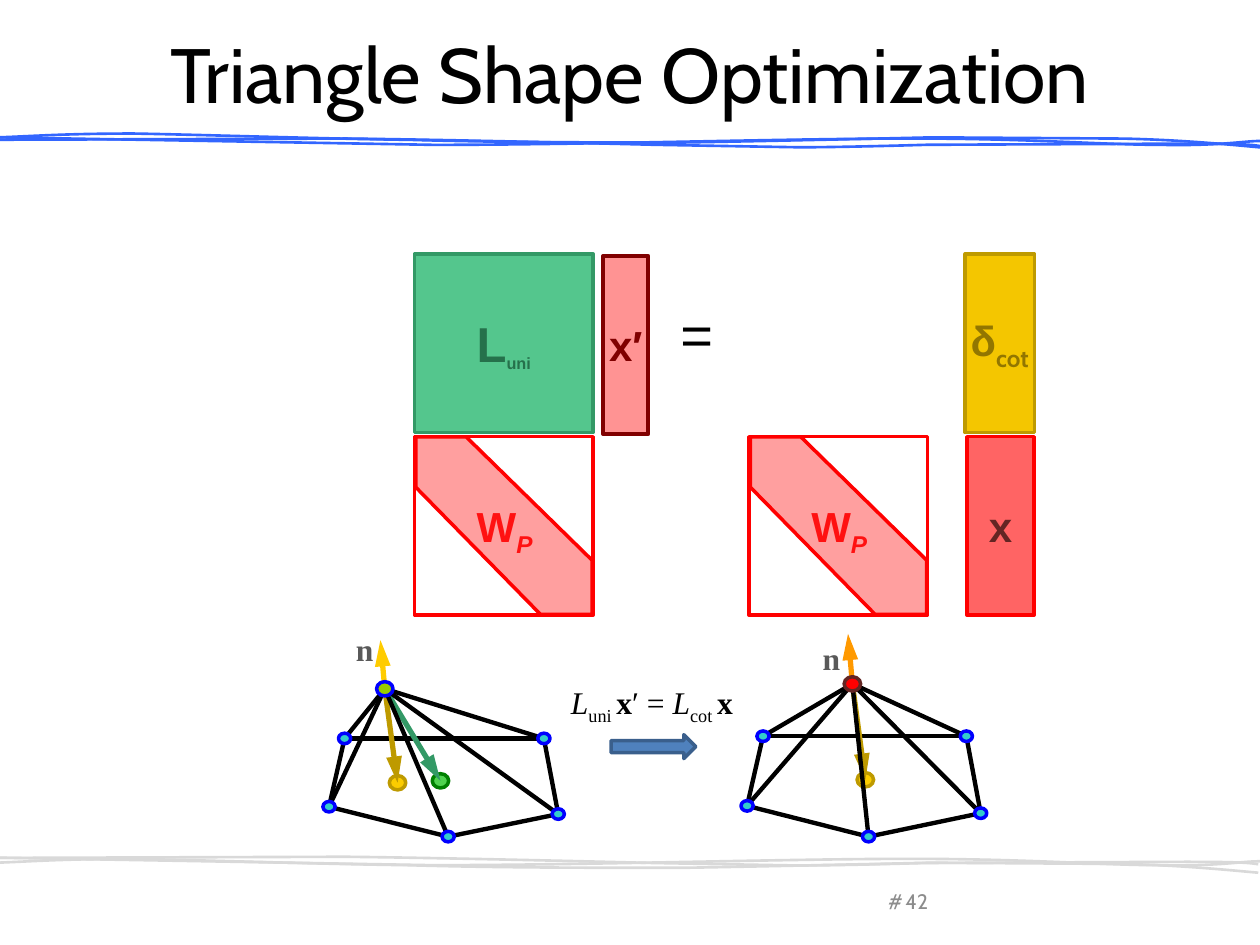
from dataclasses import dataclass
from typing import NamedTuple, Optional

from lxml.etree import SubElement
from pptx import Presentation
from pptx.dml.color import RGBColor
from pptx.enum.shapes import MSO_CONNECTOR, MSO_SHAPE
from pptx.enum.text import MSO_ANCHOR, PP_ALIGN
from pptx.oxml.ns import qn
from pptx.util import Pt

BLACK = RGBColor(0x00, 0x00, 0x00)
BLUE = RGBColor(0x00, 0x00, 0xFF)
RED = RGBColor(0xFF, 0x00, 0x00)
SKY = RGBColor(0x33, 0x66, 0xFF)
PALE = RGBColor(0xD9, 0xD9, 0xD9)
GRAY = RGBColor(0x8C, 0x8C, 0x8C)
SLATE = RGBColor(0x59, 0x59, 0x59)
ROSE = RGBColor(0xFF, 0x93, 0x93)
BLUSH = RGBColor(0xFF, 0x9F, 0x9F)
CORAL = RGBColor(0xFF, 0x64, 0x64)
FLAME = RGBColor(0xFF, 0x11, 0x11)
MAROON = RGBColor(0x80, 0x00, 0x00)
BROWN = RGBColor(0x63, 0x25, 0x23)
AMBER = RGBColor(0xF4, 0xC6, 0x00)
GOLD = RGBColor(0xFC, 0xCC, 0x00)
SUN = RGBColor(0xFF, 0xCC, 0x00)
ORANGE = RGBColor(0xFF, 0x99, 0x00)
OCHRE = RGBColor(0xBE, 0x9A, 0x00)
OLIVE = RGBColor(0x92, 0x76, 0x00)
MINT = RGBColor(0x54, 0xC6, 0x8D)
GREEN = RGBColor(0x33, 0x99, 0x66)
FOREST = RGBColor(0x25, 0x71, 0x4B)
GRASS = RGBColor(0x4F, 0xD3, 0x4F)
MOSS = RGBColor(0x00, 0x80, 0x00)
LIME = RGBColor(0x99, 0xCC, 0x00)
AQUA = RGBColor(0x33, 0xCC, 0xCC)
STEEL = RGBColor(0x4F, 0x81, 0xBD)
NAVY = RGBColor(0x3A, 0x5F, 0x8C)

SANS, TITLE, SERIF = "Arial", "Cabin", "Times New Roman"
SIDE = 102
TOP, LOW = 145.2, 249.6
Point = tuple[float, float]


class Bit(NamedTuple):
    text: str
    size: float
    color: RGBColor
    font: str = SANS
    bold: bool = False
    slant: bool = False
    sub: bool = False


class Pull(NamedTuple):
    tip: Point
    fill: RGBColor
    edge: RGBColor
    line: RGBColor


@dataclass
class Mesh:
    peak: Point
    rim: list[Point]
    pulls: list[Pull]
    normal: Point
    shade: RGBColor
    fill: RGBColor
    edge: RGBColor
    label: Point


# Each strand: drop to the footer, start, then lines (2 numbers) and curves (6).
STRANDS = [
    (411.6, (-0.7, 78.5), [
        (247.7, 82.8), (334.8, 82.8, 451.4, 79.2, 520.6, 79.2),
        (589.7, 79.2, 630.7, 82.8, 663.8, 82.8),
        (697, 83.5, 710.6, 80.6, 720, 80.6), (729.4, 79.9, 724, 80.3, 719.3, 80.6)]),
    (414.5, (-0.7, 78.5), [
        (18.7, 77.8, 37.4, 76.3, 76.3, 76.3), (115.9, 77, 181.4, 79.2, 234, 79.9),
        (285.8, 81.4, 341.3, 81.4, 391, 81.4),
        (440.6, 80.6, 532.8, 78.5, 532.8, 78.5), (642.2, 79.2),
        (673.2, 79.9, 697, 82.1, 720, 84.2)]),
    (410.4, (-1.4, 79.9), [
        (198, 79.2), (260.6, 79.9, 374.4, 82.8, 374.4, 82.8), (456.5, 84.2),
        (482.4, 84.2, 529.2, 82.8, 529.2, 82.8), (678.2, 82.1),
        (710.6, 82.1, 715.7, 82.8, 720, 83.5)]),
]
BAND = [(101.5, 101.5), (72, 101.5), (0.7, 28.8), (0.7, 0), (29.5, 0), (101.5, 70.6)]
MESHES = [
    Mesh((219.9, 393.6),
         [(196.9, 422), (310.8, 422), (319, 465.2), (256.1, 478.1), (188, 461)],
         [Pull((251.7, 446.2), GRASS, MOSS, GREEN), Pull((227.2, 447.3), GOLD, OCHRE, OCHRE)],
         (217.4, 365.8), SUN, LIME, BLUE, (196.3, 356.4)),
    Mesh((487.1, 390.8),
         [(436, 420.7), (552.2, 420.7), (560.4, 464.7), (496.3, 478.1), (426.9, 460.5)],
         [Pull((494.5, 445.6), GOLD, OCHRE, OCHRE)],
         (484.6, 362.2), ORANGE, RED, BROWN, (463, 361.4)),
]


def paint(shape, fill: Optional[RGBColor], edge: RGBColor, width: float = 2):
    shape.shadow.inherit = False
    if fill is None:
        shape.fill.background()
    else:
        shape.fill.solid()
        shape.fill.fore_color.rgb = fill
    shape.line.color.rgb = edge
    shape.line.width = Pt(width)


def write(shape, bits: list[Bit], align=PP_ALIGN.CENTER, anchor=MSO_ANCHOR.MIDDLE, wrap=False):
    frame = shape.text_frame
    frame.word_wrap = wrap
    frame.vertical_anchor = anchor
    para = frame.paragraphs[0]
    para.alignment = align
    for bit in bits:
        run = para.add_run()
        run.text = bit.text
        font = run.font
        font.name, font.size = bit.font, Pt(bit.size)
        font.bold, font.italic = bit.bold, bit.slant
        font.color.rgb = bit.color
        if bit.sub:
            run._r.get_or_add_rPr().set("baseline", "-25000")


def label(slide, x: float, y: float, w: float, h: float, bits: list[Bit],
          align=PP_ALIGN.CENTER, anchor=MSO_ANCHOR.TOP, wrap=True):
    box = slide.shapes.add_textbox(Pt(x), Pt(y), Pt(w), Pt(h))
    write(box, bits, align, anchor, wrap)


def block(slide, kind, x: float, y: float, w: float, h: float, fill, edge, bits=()):
    shape = slide.shapes.add_shape(kind, Pt(x), Pt(y), Pt(w), Pt(h))
    paint(shape, fill, edge)
    if bits:
        write(shape, bits)


def dot(slide, spot: Point, w: float, h: float, fill: RGBColor, edge: RGBColor):
    block(slide, MSO_SHAPE.OVAL, spot[0] - w / 2, spot[1] - h / 2, w, h, fill, edge)


def outline(slide, points: list[Point], close: bool):
    first, *rest = [(Pt(x), Pt(y)) for x, y in points]
    pen = slide.shapes.build_freeform(*first)
    pen.add_line_segments(rest, close=close)
    return pen.convert_to_shape()


def strand(slide, start: Point, steps: list, dx: float, dy: float):
    """Draw an open line, bending each six-number step into a cubic curve."""
    ends = [start] + [step[-2:] for step in steps]
    shape = outline(slide, [(x + dx, y + dy) for x, y in ends], False)
    legs = list(shape._element.iter(qn("a:lnTo")))
    for leg, step in zip(legs, steps):
        if len(step) == 2:
            continue
        leg.tag = qn("a:cubicBezTo")
        for i, (x, y) in enumerate((step[:2], step[2:4])):
            knot = SubElement(leg, qn("a:pt"), x=str(Pt(x + dx) - shape.left),
                              y=str(Pt(y + dy) - shape.top))
            leg.insert(i, knot)
    return shape


def line(slide, start: Point, end: Point, color=BLACK, width: float = 2.5, head=False):
    link = slide.shapes.add_connector(
        MSO_CONNECTOR.STRAIGHT, *[Pt(v) for v in (*start, *end)])
    link.line.color.rgb = color
    link.line.width = Pt(width)
    if head:
        SubElement(link.line._get_or_add_ln(), qn("a:tailEnd"),
                   type="triangle", w="med", len="lg")
    SubElement(link._element.spPr, qn("a:effectLst"))


def waves(slide, color: RGBColor, foot: bool):
    for drop, start, steps in STRANDS:
        paint(strand(slide, start, steps, -foot, drop * foot), None, color, 1.5)


def weight(slide, x: float):
    """Draw the square with the diagonal band and its weight label."""
    block(slide, MSO_SHAPE.RECTANGLE, x, LOW, SIDE, SIDE, None, RED)
    paint(outline(slide, [(x + a, LOW + b) for a, b in BAND], True), BLUSH, RED)
    label(slide, x + 25.9, 282.5, 51.1, 36, [
        Bit("W", 24, FLAME, bold=True), Bit("P", 24, FLAME, bold=True, slant=True, sub=True)])


def draw(slide, mesh: Mesh):
    for start, end in zip(mesh.rim, mesh.rim[1:] + mesh.rim[:1]):
        line(slide, start, end)
    for pull in mesh.pulls:
        dot(slide, pull.tip, 9.4, 8.2, pull.fill, pull.edge)
        line(slide, mesh.peak, pull.tip, pull.line, 3, True)
    line(slide, mesh.peak, mesh.normal, mesh.shade, 3, True)
    for spot in mesh.rim:
        line(slide, mesh.peak, spot)
    for spot in mesh.rim:
        dot(slide, spot, 7, 6, AQUA, BLUE)
    dot(slide, mesh.peak, 9.4, 8.2, mesh.fill, mesh.edge)
    label(slide, *mesh.label, 19.4, 22, [Bit("n", 18, SLATE, SERIF, True)], PP_ALIGN.LEFT)


def main():
    deck = Presentation()
    deck.slide_width, deck.slide_height = Pt(720), Pt(540)
    slide = deck.slides.add_slide(deck.slide_layouts[6])
    waves(slide, SKY, False)
    waves(slide, PALE, True)
    mid = MSO_ANCHOR.MIDDLE
    label(slide, 36, 22.2, 648, 38.2,
          [Bit("Triangle Shape Optimization", 44, BLACK, TITLE)], anchor=mid)

    rect = MSO_SHAPE.RECTANGLE
    block(slide, rect, 236.9, TOP, SIDE, SIDE, MINT, GREEN, [
        Bit("L", 28, FOREST, bold=True), Bit("uni", 16, FOREST, bold=True, sub=True)])
    block(slide, rect, 344.7, 146.2, 25.8, SIDE, ROSE, MAROON,
          [Bit("x′", 24, MAROON, bold=True)])
    label(slide, 378.4, 167.8, 39.6, 45.4, [Bit("=", 32, BLACK)])
    block(slide, rect, 551.5, TOP, 39.6, SIDE, AMBER, OCHRE, [
        Bit("δ", 24, OLIVE, bold=True), Bit("cot", 24, OLIVE, TITLE, True, sub=True)])
    block(slide, rect, 552.5, LOW, 38.5, SIDE, CORAL, RED, [Bit("x", 24, BROWN, bold=True)])
    for x in (236.9, 428.1):
        weight(slide, x)

    for mesh in MESHES:
        draw(slide, mesh)
    block(slide, MSO_SHAPE.RIGHT_ARROW, 349.2, 419.8, 48.4, 13.7, STEEL, NAVY)
    label(slide, 319.2, 386.6, 113, 28.8, [
        Bit("L", 18, BLACK, SERIF, slant=True), Bit("uni ", 18, BLACK, SERIF, sub=True),
        Bit("x", 18, BLACK, SERIF, True), Bit("′ = ", 18, BLACK, SERIF),
        Bit("L", 18, BLACK, SERIF, slant=True), Bit("cot ", 18, BLACK, SERIF, sub=True),
        Bit("x", 18, BLACK, SERIF, True)], PP_ALIGN.LEFT, wrap=False)
    label(slide, 500.4, 504, 21.6, 21.6, [Bit("#", 12, GRAY, TITLE)], anchor=mid)
    label(slide, 500.4, 500.4, 46.8, 28.8, [Bit("42", 12, GRAY, TITLE)], anchor=mid)
    deck.save("out.pptx")


if __name__ == "__main__":
    main()
